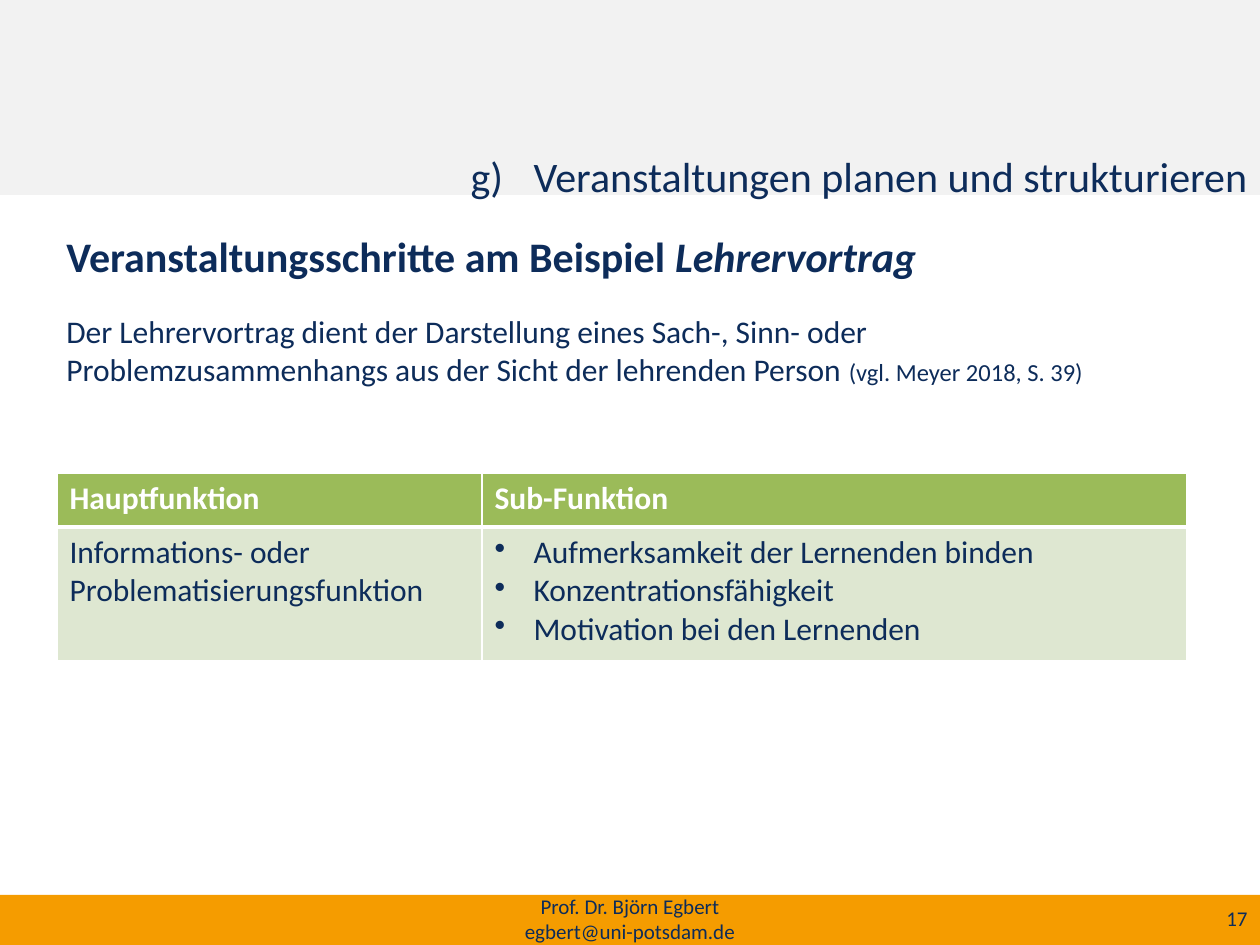
"""Build the slide on lecture steps with its function table."""
import pptx
import pptx.dml.color
import pptx.enum.shapes
import pptx.enum.text
import pptx.oxml.ns
import pptx.util
from lxml import etree

RGBColor = pptx.dml.color.RGBColor
Align = pptx.enum.text.PP_ALIGN
Anchor = pptx.enum.text.MSO_ANCHOR

NAVY = RGBColor(0x0D, 0x2C, 0x5A)
WHITE = RGBColor(0xFF, 0xFF, 0xFF)
GREY = RGBColor(0xF2, 0xF2, 0xF2)
ORANGE = RGBColor(0xF5, 0x9C, 0x00)
GREEN = RGBColor(0x9B, 0xBB, 0x59)
PALE_GREEN = RGBColor(0xDE, 0xE7, 0xD1)

SCALE = 914400 / 126
PAGE_SIZE = (1260, 945)
BANDS = [((0, 0, 1260, 195), GREY), ((0, 895, 1260, 50), ORANGE)]

LETTERED = {"tag": "a:buAutoNum", "indent": 63,
            "values": {"type": "alphaLcParenR", "startAt": "7"}}
DOTTED = {"tag": "a:buChar", "indent": 39, "values": {"char": "•"}}

TEXTS = [
    {"at": (54, 224, 1160, 69), "paras": [
        [("Veranstaltungsschritte am Beispiel ", {"size": 24, "bold": True}),
         ("Lehrervortrag", {"size": 24, "bold": True, "italic": True})]]},
    {"at": (958, 893, 302, 50), "anchor": Anchor.MIDDLE, "align": Align.RIGHT,
     "paras": [[("17", {"size": 12})]]},
    {"at": (417, 893, 426, 52), "anchor": Anchor.MIDDLE, "align": Align.CENTER,
     "paras": [[("Prof. Dr. Björn Egbert", {"size": 12})],
               [("egbert@uni-potsdam.de", {"size": 12})]]},
    {"at": (54, 306, 1131, 89), "paras": [
        [("Der Lehrervortrag dient der Darstellung eines Sach-, Sinn- oder "
          "Problemzusammenhangs aus der Sicht der lehrenden Person ", {"size": 18}),
         ("(vgl. Meyer 2018, S. 39)", {"size": 14})]]},
    {"at": (174, 144, 1086, 62), "align": Align.RIGHT, "bullet": LETTERED,
     "paras": [[("Veranstaltungen planen und strukturieren", {"size": 24})]]},
]

TABLE_AT = (57, 473)
COLUMNS = [425, 705]
ROWS = [
    {"height": 54, "fill": GREEN, "format": {"size": 18, "bold": True, "color": WHITE},
     "borders": {"lnL": 1, "lnR": 1, "lnT": 1, "lnB": 3},
     "cells": [["Hauptfunktion"], ["Sub-Funktion"]]},
    {"height": 134, "fill": PALE_GREEN, "format": {"size": 18, "bold": False},
     "borders": {"lnL": 1, "lnR": 1, "lnT": 3, "lnB": 1},
     "cells": [["Informations- oder Problematisierungsfunktion"],
               ["Aufmerksamkeit der Lernenden binden", "Konzentrationsfähigkeit",
                "Motivation bei den Lernenden"]]},
]


def emu(*lengths):
    return [round(length * SCALE) for length in lengths]


def add_child(parent, tag, **values):
    return etree.SubElement(parent, pptx.oxml.ns.qn(tag), values)


def write(frame, paras, align=None, bullet=None):
    for index, spans in enumerate(paras):
        para = frame.paragraphs[0] if index == 0 else frame.add_paragraph()
        para.alignment = align
        if bullet:
            properties = para._p.get_or_add_pPr()
            indent = emu(bullet["indent"])[0]
            properties.set("marL", str(indent))
            properties.set("indent", str(-indent))
            add_child(properties, bullet["tag"], **bullet["values"])
        for text, styles in spans:
            span = para.add_run()
            span.text = text
            look = {"name": "Calibri", "color": NAVY, **styles}
            look["size"] = pptx.util.Pt(look["size"])
            span.font.fill.solid()
            span.font.fill.fore_color.rgb = look.pop("color")
            for name, value in look.items():
                setattr(span.font, name, value)


def add_band(page, at, color):
    band = page.shapes.add_shape(pptx.enum.shapes.MSO_SHAPE.RECTANGLE, *emu(*at))
    band.shadow.inherit = False
    band.fill.solid()
    band.fill.fore_color.rgb = color
    band.line.fill.background()


def add_text(page, at, paras, anchor=Anchor.TOP, align=None, bullet=None):
    frame = page.shapes.add_textbox(*emu(*at)).text_frame
    frame.word_wrap = True
    frame.vertical_anchor = anchor
    write(frame, paras, align, bullet)


def style_cell(cell, fill, borders):
    properties = cell._tc.get_or_add_tcPr()
    for side, points in borders.items():
        line = add_child(properties, "a:" + side, w=str(pptx.util.Pt(points)))
        add_child(add_child(line, "a:solidFill"), "a:srgbClr", val=str(WHITE))
    cell.fill.solid()
    cell.fill.fore_color.rgb = fill


def add_function_table(page):
    size = (sum(COLUMNS), sum(row["height"] for row in ROWS))
    table = page.shapes.add_table(len(ROWS), len(COLUMNS), *emu(*TABLE_AT, *size)).table
    for column, width in zip(table.columns, emu(*COLUMNS)):
        column.width = width
    for table_row, row in zip(table.rows, ROWS):
        table_row.height = emu(row["height"])[0]
        for cell, lines in zip(table_row.cells, row["cells"]):
            style_cell(cell, row["fill"], row["borders"])
            is_list = len(lines) > 1
            write(cell.text_frame, [[(line, row["format"])] for line in lines],
                  Align.JUSTIFY if is_list else None, DOTTED if is_list else None)


def main():
    deck = pptx.Presentation()
    deck.slide_width, deck.slide_height = emu(*PAGE_SIZE)
    page = deck.slides.add_slide(deck.slide_layouts[6])
    for at, color in BANDS:
        add_band(page, at, color)
    for text in TEXTS:
        add_text(page, **text)
    add_function_table(page)
    deck.save("out.pptx")


if __name__ == "__main__":
    main()
